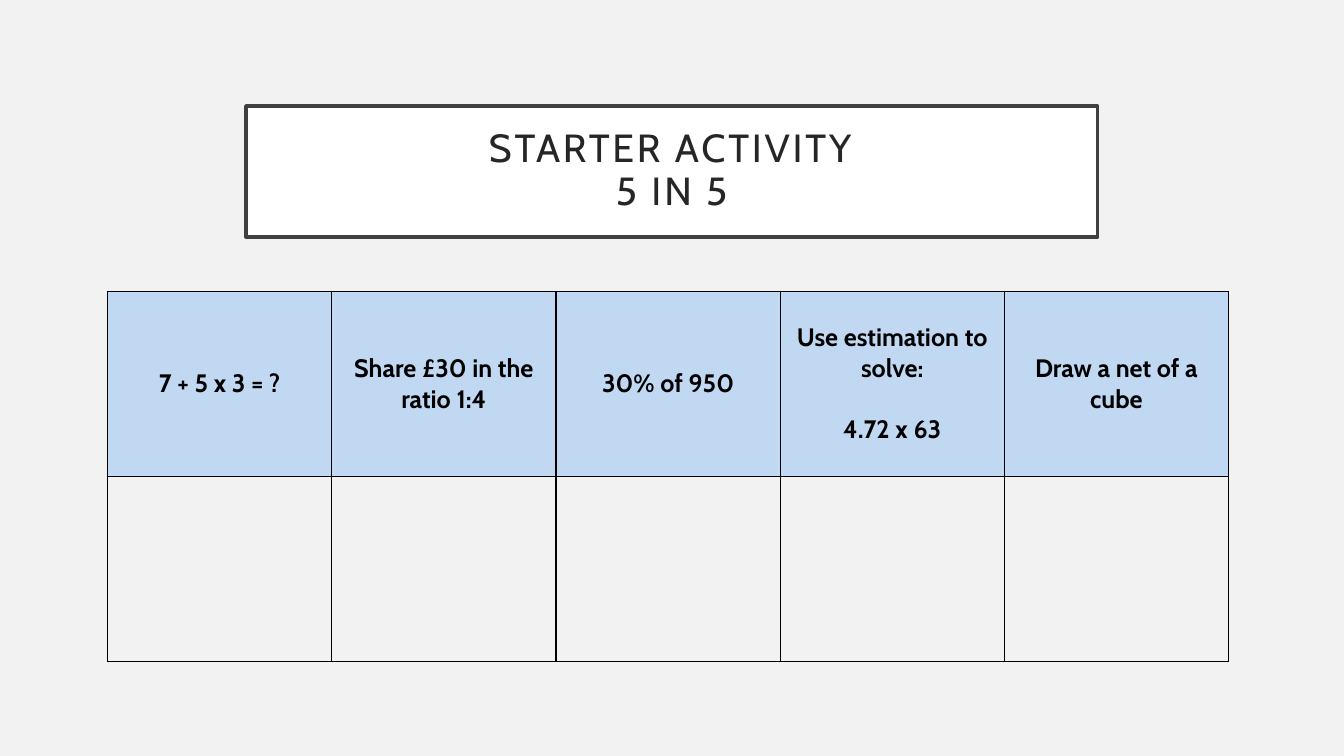
from lxml.etree import SubElement
from pptx import Presentation
from pptx.dml.color import RGBColor
from pptx.enum.shapes import MSO_SHAPE
from pptx.enum.text import MSO_ANCHOR, PP_ALIGN
from pptx.oxml import parse_xml
from pptx.oxml.ns import nsdecls, qn
from pptx.util import Cm, Pt

TITLE = "STARTER ACTIVITY\v5 IN 5"
QUESTIONS = [
    ["7 + 5 x 3 = ?"],
    ["Share £30 in the ratio 1:4"],
    ["30% of 950"],
    ["Use estimation to solve:", "4.72 x 63"],
    ["Draw a net of a cube"],
]
FONT = "Cabin"
BACKGROUND = RGBColor(0xF2, 0xF2, 0xF2)
WHITE = RGBColor(0xFF, 0xFF, 0xFF)
BLACK = RGBColor(0, 0, 0)
FRAME = RGBColor(0x40, 0x40, 0x40)
TITLE_INK = RGBColor(0x26, 0x26, 0x26)
QUESTION_BLUE = RGBColor(0xC1, 0xD8, 0xF2)
COLUMN_WIDTH = Cm(5.65)
ROW_HEIGHT = Cm(4.66)
BORDER_SIDES = ["lnL", "lnR", "lnT", "lnB"]


def write(text, p, size, color, bold=False, spacing=0, line=1.0, before=0):
    p.text = text
    p.alignment = PP_ALIGN.CENTER
    p.line_spacing = line
    p.space_before = Pt(before)
    for r in p.runs:
        r.font.name = FONT
        r.font.size = Pt(size)
        r.font.bold = bold
        r.font.color.rgb = color
        if spacing:
            r.font._element.set("spc", str(spacing * 100))


def add_title(s):
    sp = s.shapes.add_shape(MSO_SHAPE.RECTANGLE, Cm(6.2), Cm(2.67), Cm(21.46), Cm(3.3))
    sp.shadow.inherit = False
    sp.fill.solid()
    sp.fill.fore_color.rgb = WHITE
    sp.line.color.rgb = FRAME
    sp.line.width = Pt(2.5)
    tf = sp.text_frame
    tf.word_wrap = True
    tf.vertical_anchor = MSO_ANCHOR.MIDDLE
    tf.margin_left = tf.margin_right = tf.margin_top = tf.margin_bottom = Cm(0.5)
    write(TITLE, tf.paragraphs[0], 28, TITLE_INK, spacing=2, line=0.9)


def style_cell(cell, fill):
    cell.vertical_anchor = MSO_ANCHOR.MIDDLE
    tcPr = cell._tc.get_or_add_tcPr()
    for side in BORDER_SIDES:
        ln = parse_xml(f'<a:{side} {nsdecls("a")} w="{Pt(1)}"/>')
        solid = SubElement(ln, qn("a:solidFill"))
        SubElement(solid, qn("a:srgbClr"), val=str(BLACK))
        tcPr.append(ln)
    cell.fill.solid()
    cell.fill.fore_color.rgb = fill


def add_questions(s):
    count = len(QUESTIONS)
    table = s.shapes.add_table(2, count, Cm(2.71), Cm(7.34),
                               COLUMN_WIDTH * count, ROW_HEIGHT * 2).table
    table.first_row = table.horz_banding = False
    for row in table.rows:
        row.height = ROW_HEIGHT
    for i, lines in enumerate(QUESTIONS):
        table.columns[i].width = COLUMN_WIDTH
        question = table.cell(0, i)
        style_cell(question, QUESTION_BLUE)
        style_cell(table.cell(1, i), BACKGROUND)
        tf = question.text_frame
        for n, text in enumerate(lines):
            p = tf.add_paragraph() if n else tf.paragraphs[0]
            write(text, p, 18, BLACK, bold=True, before=22 if n else 0)


def main():
    prs = Presentation()
    prs.slide_width, prs.slide_height = Cm(33.87), Cm(19.05)
    s = prs.slides.add_slide(prs.slide_layouts[6])
    s.background.fill.solid()
    s.background.fill.fore_color.rgb = BACKGROUND
    add_title(s)
    add_questions(s)
    prs.save("out.pptx")


if __name__ == "__main__":
    main()
